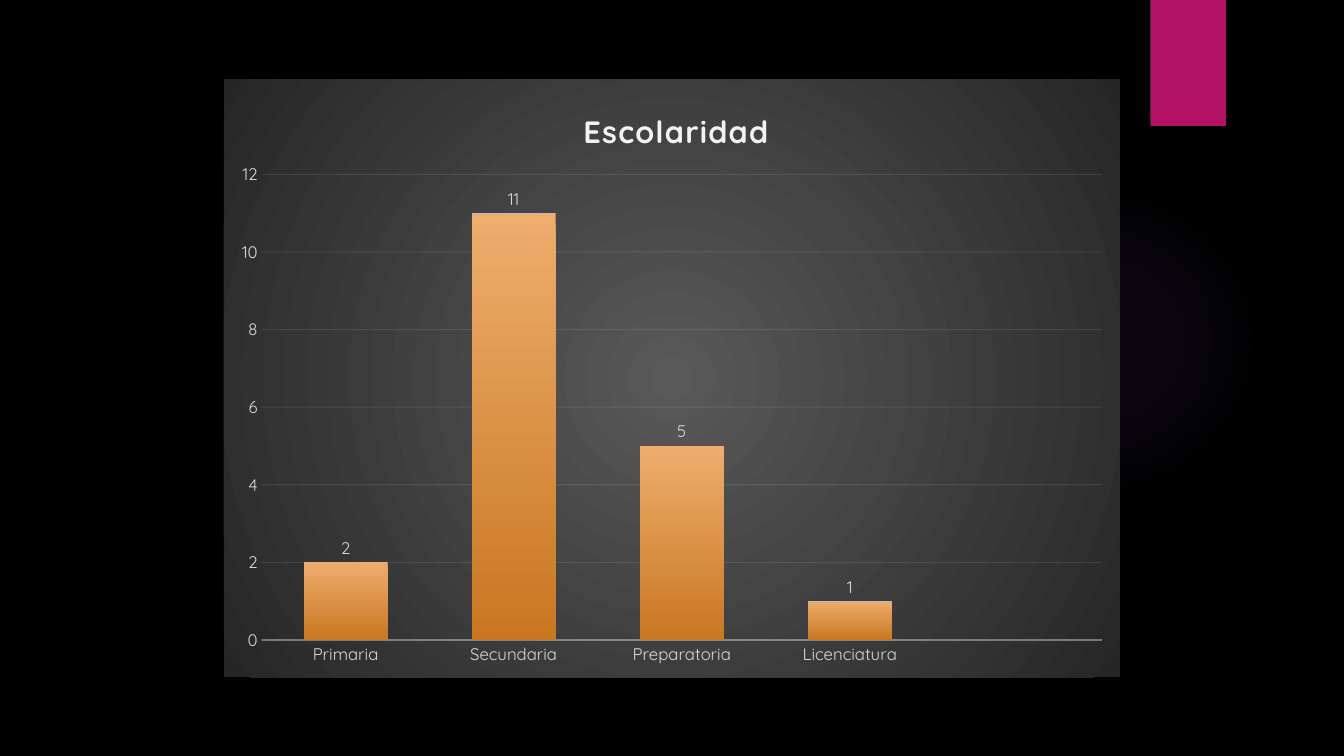
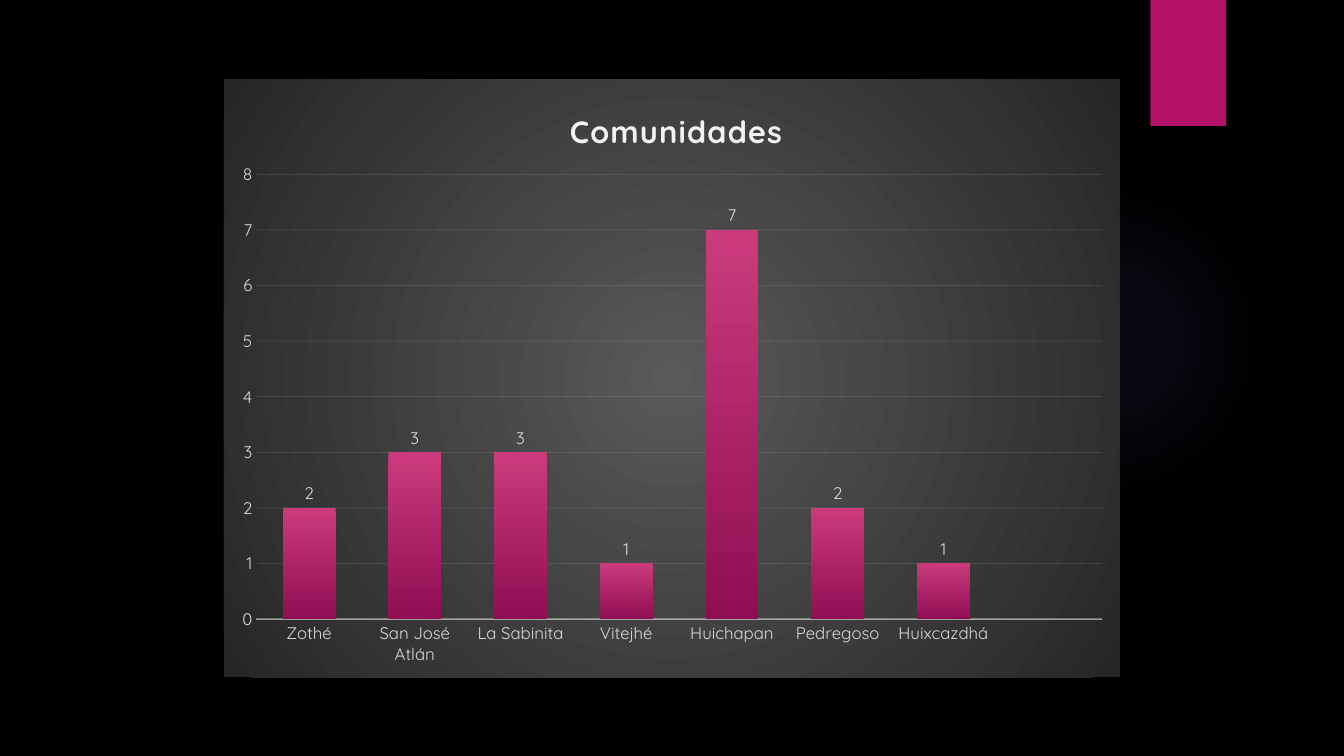
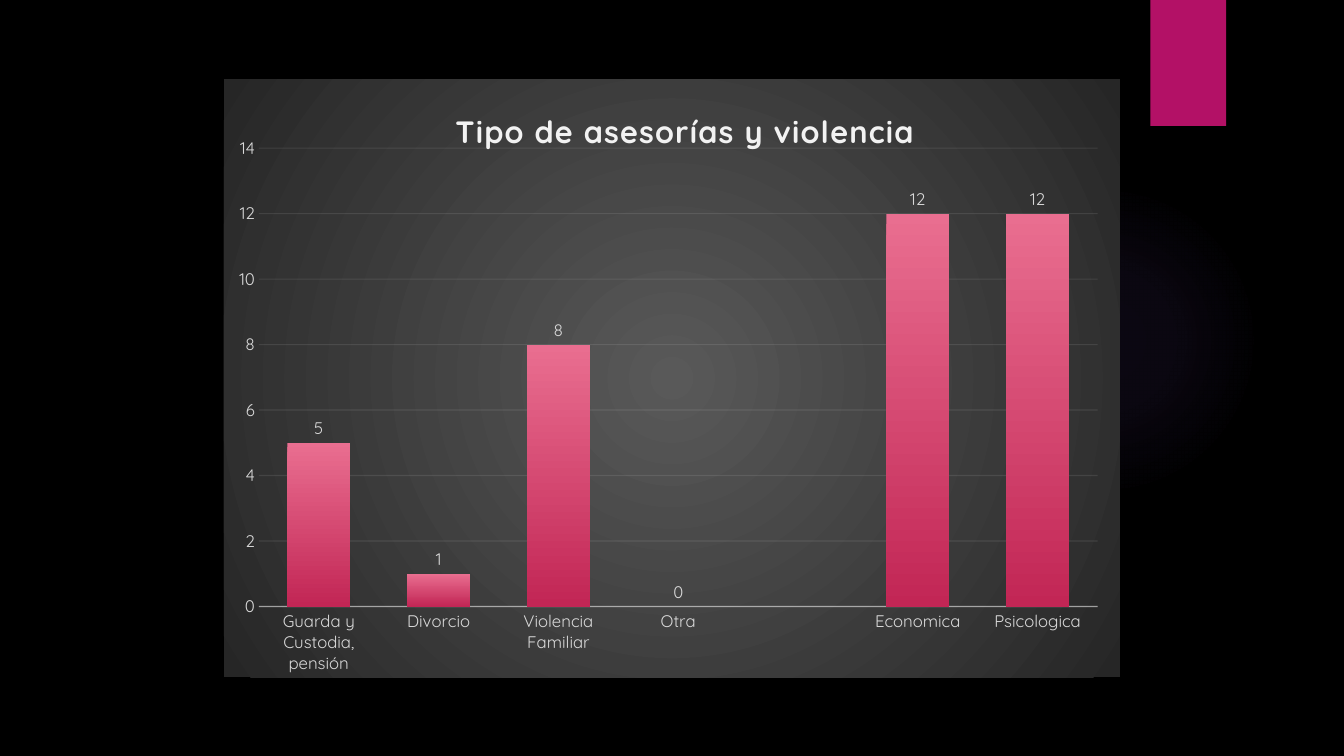
import pptx
import pptx.chart.data
import pptx.dml.color
import pptx.enum.chart
import pptx.enum.shapes
import pptx.oxml
import pptx.oxml.ns
import pptx.util

Pt = pptx.util.Pt
RGBColor = pptx.dml.color.RGBColor
MSO_SHAPE = pptx.enum.shapes.MSO_SHAPE
XL = pptx.enum.chart

# Style
FONT = "Quicksand"
BLACK = RGBColor(0x00, 0x00, 0x00)
WHITE = RGBColor(0xFF, 0xFF, 0xFF)
PALE = RGBColor(0xF2, 0xF2, 0xF2)
LABEL = RGBColor(0xD9, 0xD9, 0xD9)
MAGENTA = RGBColor(0xB3, 0x11, 0x66)
GLOW = RGBColor(0x9B, 0x6B, 0xF2)
PANEL = (RGBColor(0x59, 0x59, 0x59), RGBColor(0x26, 0x26, 0x26))
ORANGE_BARS = (RGBColor(0xEE, 0xAD, 0x6D), RGBColor(0xC9, 0x77, 0x21))
MAGENTA_BARS = (RGBColor(0xCB, 0x3B, 0x7C), RGBColor(0x90, 0x0E, 0x52))
PINK_BARS = (RGBColor(0xE9, 0x6E, 0x90), RGBColor(0xC2, 0x26, 0x55))

LINEAR = '<a:lin ang="5400000" scaled="0"/>'
RADIAL = ('<a:path path="circle"><a:fillToRect l="50000" t="50000" '
          'r="50000" b="50000"/></a:path>')


def xml(text):
    """Parse a fragment whose root tag gets the a: and c: namespaces."""
    tag = text[1:].split(">")[0].split(" ")[0]
    ns = pptx.oxml.ns.nsdecls("a", "c")
    return pptx.oxml.parse_xml(text.replace(tag, f"{tag} {ns}", 1))


def gradient(stops, direction):
    """Gradient fill from (position %, colour, opacity %) stops."""
    gs = "".join(
        f'<a:gs pos="{pos * 1000}"><a:srgbClr val="{color}">'
        f'<a:alpha val="{alpha * 1000}"/></a:srgbClr></a:gs>'
        for pos, color, alpha in stops)
    return xml(f"<a:gradFill><a:gsLst>{gs}</a:gsLst>{direction}</a:gradFill>")


def two_tone(colors, direction):
    return gradient([(0, colors[0], 100), (100, colors[1], 100)], direction)


def layout(x, y, w=None, h=None):
    """Manual chart layout in fractions of the chart area."""
    parts = [("xMode", "edge"), ("yMode", "edge"), ("x", x), ("y", y)]
    if w is not None:
        parts = [("layoutTarget", "inner")] + parts + [("w", w), ("h", h)]
    body = "".join(f'<c:{k} val="{v}"/>' for k, v in parts)
    return xml(f"<c:layout><c:manualLayout>{body}</c:manualLayout></c:layout>")


class Deck:
    def __init__(self):
        self.prs = pptx.Presentation()
        self.prs.slide_width, self.prs.slide_height = Pt(960), Pt(540)
        fill = self.prs.slide_master.background.fill
        fill.solid()
        fill.fore_color.rgb = BLACK
        self.blank = self.prs.slide_layouts[6]
        for ph in list(self.blank.placeholders):
            self.blank.shapes.element.remove(ph.element)
        self.add_slide()
        self.decorate_layout()

    def add_slide(self):
        self.s = self.prs.slides.add_slide(self.blank)

    def shape(self, kind, x, y, w, h, color):
        sp = self.s.shapes.add_shape(kind, Pt(x), Pt(y), Pt(w), Pt(h))
        sp.shadow.inherit = False
        sp.fill.solid()
        sp.fill.fore_color.rgb = color
        sp.line.fill.background()
        return sp

    def decorate_layout(self):
        """Move the glow and the ribbon to the layout shared by all slides."""
        glow = self.shape(MSO_SHAPE.OVAL, 677.5, 131.8, 221.8, 221.8, GLOW)
        solid = glow.element.xpath("p:spPr/a:solidFill")[0]
        stops = [(0, GLOW, 7), (36, GLOW, 6), (69, GLOW, 0)]
        solid.getparent().replace(solid, gradient(stops, RADIAL))

        ribbon = self.shape(MSO_SHAPE.RECTANGLE, 821.8, 0, 54, 90, MAGENTA)
        ribbon.element.xpath("p:spPr/a:effectLst")[0].append(xml(
            f'<a:outerShdw blurRad="{Pt(3)}" dist="{Pt(2)}" dir="5400000" '
            f'rotWithShape="0"><a:srgbClr val="{BLACK}">'
            '<a:alpha val="45000"/></a:srgbClr></a:outerShdw>'))
        for sp in (glow, ribbon):
            self.blank.shapes.element.append(sp.element)

    def font(self, font, size, color, bold=False):
        font.name, font.size, font.bold = FONT, Pt(size), bold
        font.color.rgb = color

    def line(self, line, width):
        line.color.rgb = PALE
        line.width = Pt(width)

    def column_chart(self, title, title_x, data, colors, top, step, plot_box,
                     gap=100, overlap=-24):
        cd = pptx.chart.data.CategoryChartData()
        cd.categories = [name for name, _ in data]
        cd.add_series("Series 1", [value for _, value in data])
        chart = self.s.shapes.add_chart(
            XL.XL_CHART_TYPE.COLUMN_CLUSTERED,
            Pt(160), Pt(56.7), Pt(640), Pt(427), cd).chart
        root = chart.element
        chart.has_legend = False
        self.font(chart.font, 10, WHITE)

        # Title
        chart.has_title = True
        r = chart.chart_title.text_frame.paragraphs[0].add_run()
        r.text = title
        self.font(r.font, 22, PALE, bold=True)
        root.xpath(".//c:title//a:r/a:rPr")[0].set("spc", "100")
        for old in root.xpath(".//c:title/c:layout | .//c:plotArea/c:layout"):
            old.getparent().remove(old)
        root.xpath(".//c:title/c:tx")[0].addnext(layout(title_x, 0.04))
        root.xpath(".//c:plotArea")[0].insert(0, layout(*plot_box))

        # Axes
        cat, val = chart.category_axis, chart.value_axis
        for axis in (cat, val):
            axis.major_tick_mark = axis.minor_tick_mark = XL.XL_TICK_MARK.NONE
            self.font(axis.tick_labels.font, 12, LABEL)
        val.minimum_scale, val.maximum_scale, val.major_unit = 0, top, step
        val.has_major_gridlines = True
        val.format.line.fill.background()
        self.line(val.major_gridlines.format.line, 0.75)
        self.line(cat.format.line, 1)
        for where, alpha in (("c:majorGridlines", 10), ("c:catAx/c:spPr", 54)):
            clr = root.xpath(f".//{where}//a:srgbClr")[0]
            clr.append(xml(f'<a:alpha val="{alpha * 1000}"/>'))

        # Columns and value labels
        plot = chart.plots[0]
        plot.vary_by_categories = False
        plot.gap_width, plot.overlap = gap, overlap
        plot.has_data_labels = True
        labels = plot.data_labels
        labels.show_value = True
        labels.position = XL.XL_LABEL_POSITION.OUTSIDE_END
        self.font(labels.font, 12, LABEL)
        plot.series[0].format.fill.solid()
        solid = root.xpath(".//c:ser/c:spPr/a:solidFill")[0]
        solid.getparent().replace(solid, two_tone(colors, LINEAR))

        # Panel behind the chart
        panel = xml("<c:spPr><a:ln><a:noFill/></a:ln></c:spPr>")
        panel.insert(0, two_tone(PANEL, RADIAL))
        root.xpath("c:txPr")[0].addprevious(panel)


def main():
    deck = Deck()

    # Schooling
    deck.column_chart(
        "Escolaridad", 0.395,
        [("Primaria", 2), ("Secundaria", 11), ("Preparatoria", 5),
         ("Licenciatura", 1), ("", None)],
        ORANGE_BARS, 12, 2, (0.042, 0.159, 0.938, 0.779))

    # Communities
    deck.add_slide()
    deck.column_chart(
        "Comunidades", 0.38,
        [("Zothé", 2), ("San José Atlán", 3), ("La Sabinita", 3),
         ("Vitejhé", 1), ("Huichapan", 7), ("Pedregoso", 2),
         ("Huixcazdhá", 1), ("", None)],
        MAGENTA_BARS, 8, 1, (0.036, 0.159, 0.944, 0.744))

    # Kinds of counselling and violence
    deck.add_slide()
    deck.column_chart(
        "Tipo de asesorías y violencia", 0.252,
        [("Guarda y Custodia, pensión", 5), ("Divorcio", 1),
         ("Violencia Familiar", 8), ("Otra", 0), ("", None),
         ("Economica", 12), ("Psicologica", 12)],
        PINK_BARS, 14, 2, (0.039, 0.115, 0.936, 0.767), gap=90, overlap=-16)

    deck.prs.save("out.pptx")


if __name__ == "__main__":
    main()
